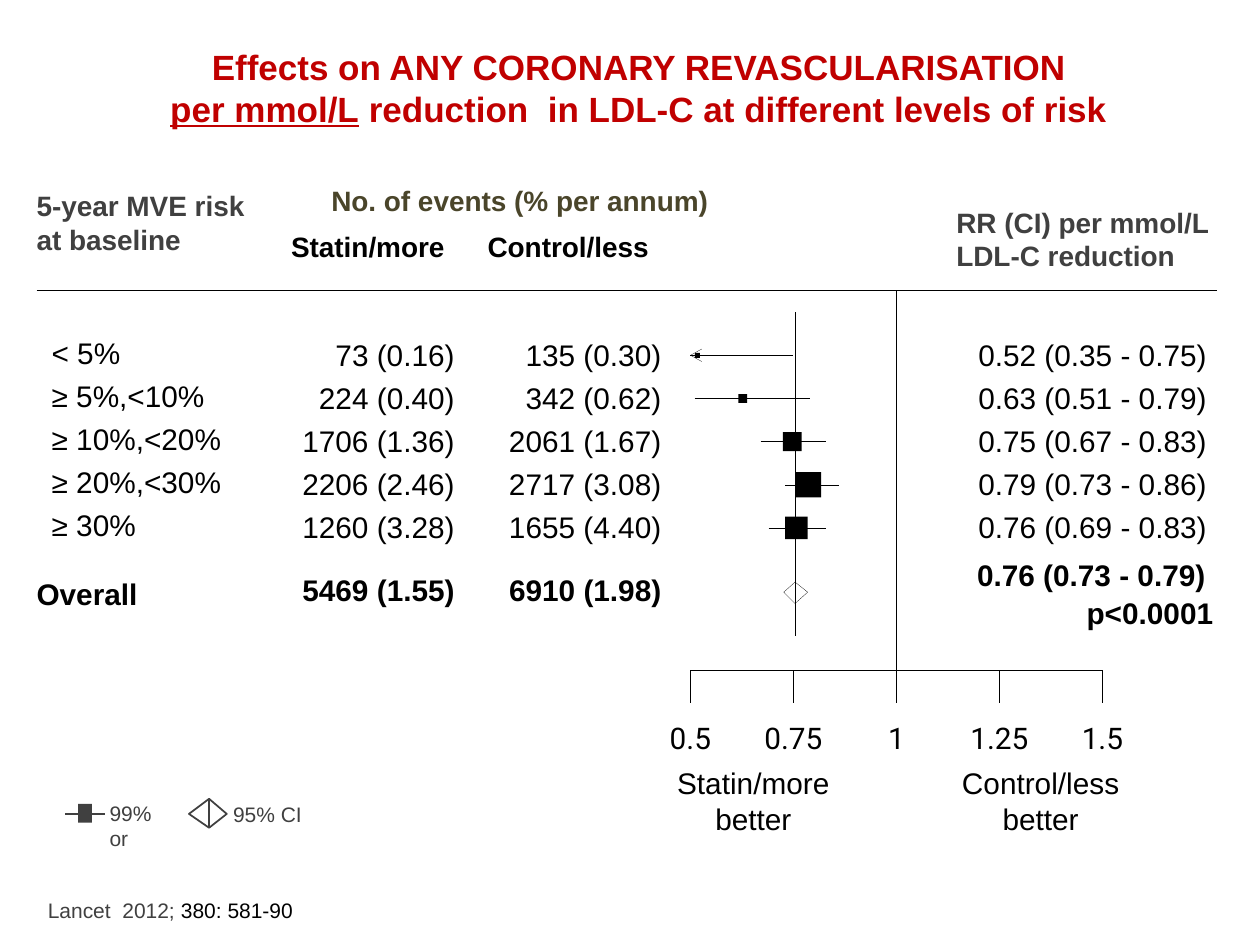
import pptx
import pptx.dml.color
import pptx.enum.dml
import pptx.enum.shapes
import pptx.enum.text
import pptx.oxml.xmlchemy
import pptx.util
from lxml import etree

Inches, Pt = pptx.util.Inches, pptx.util.Pt
RGBColor = pptx.dml.color.RGBColor
ALIGN = pptx.enum.text.PP_ALIGN
LEFT, CENTER, RIGHT = ALIGN.LEFT, ALIGN.CENTER, ALIGN.RIGHT
DRAWING_NS = "http://schemas.openxmlformats.org/drawingml/2006/main"

RED = RGBColor(0xC0, 0x00, 0x00)
GREY = RGBColor(0x40, 0x40, 0x40)
OLIVE = RGBColor(0x4A, 0x45, 0x2A)
BLACK = RGBColor(0x00, 0x00, 0x00)
HAIRLINE = 0.13

# Content: risk, statin events, control events, (estimate, low, high), marker size
RISK_ROWS = [
    ("< 5%", "73 (0.16)", "135 (0.30)", (0.52, 0.35, 0.75), 0.04),
    ("≥ 5%,<10%", "224 (0.40)", "342 (0.62)", (0.63, 0.51, 0.79), 0.07),
    ("≥ 10%,<20%", "1706 (1.36)", "2061 (1.67)", (0.75, 0.67, 0.83), 0.15),
    ("≥ 20%,<30%", "2206 (2.46)", "2717 (3.08)", (0.79, 0.73, 0.86), 0.20),
    ("≥ 30%", "1260 (3.28)", "1655 (4.40)", (0.76, 0.69, 0.83), 0.18),
]
# Heading lines, left, top, width, colour
HEADINGS = [
    (["5-year MVE risk", "at baseline"], 0.29, 1.5, 1.8, GREY),
    (["No. of events (% per annum)"], 2.63, 1.46, 3.2, OLIVE),
    (["Statin/more"], 2.31, 1.82, 1.35, BLACK),
    (["Control/less"], 3.87, 1.82, 1.4, BLACK),
    (["RR (CI) per mmol/L", "LDL-C reduction"], 7.59, 1.63, 2.2, GREY),
]
# Bold text, left, top, width, alignment
OVERALL = [
    ("Overall", 0.29, 4.57, 1.0, LEFT),
    ("5469 (1.55)", 2.2, 4.54, 1.41, RIGHT),
    ("6910 (1.98)", 3.84, 4.54, 1.41, RIGHT),
    ("0.76 (0.73 - 0.79)", 7.57, 4.42, 2.0, RIGHT),
    ("p<0.0001", 8.43, 4.72, 1.2, RIGHT),
]
TICKS = ["0.5", "0.75", "1", "1.25", "1.5"]
SIDES = [("Statin/more", 5.98), ("Control/less", 8.26)]

# Geometry
AXIS_LEFT, AXIS_TOP, AXIS_SCALE = 5.48, 5.32, 3.27
FIRST_ROW, ROW_STEP = 2.82, 0.3425
OVERALL_X, OVERALL_Y = 6.31, 4.7


def axis_x(ratio):
    return AXIS_LEFT + (ratio - 0.5) * AXIS_SCALE


def add_text(slide, lines, left, top, width, size=17, color=BLACK,
             bold=False, align=LEFT, font="Arial"):
    height = len(lines) * size / 60
    box = slide.shapes.add_textbox(*map(Inches, (left, top, width, height)))
    frame = box.text_frame
    frame.word_wrap = True
    frame.margin_left = frame.margin_right = 0
    frame.margin_top = frame.margin_bottom = 0
    frame.text = "\n".join(lines)
    for paragraph in frame.paragraphs:
        paragraph.alignment = align
        paragraph.font.name = font
        paragraph.font.size = Pt(size)
        paragraph.font.bold = bold
        paragraph.font.color.rgb = color
    return frame


def add_line(slide, x1, y1, x2, y2, color=BLACK, width=HAIRLINE):
    line = slide.shapes.add_connector(
        pptx.enum.shapes.MSO_CONNECTOR.STRAIGHT,
        *map(Inches, (x1, y1, x2, y2)))
    line.line.color.rgb = color
    line.line.width = Pt(width)
    properties = line._element.spPr
    etree.SubElement(properties, f"{{{DRAWING_NS}}}effectLst")
    return line


def add_marker(slide, x, y, width, height, color=BLACK):
    marker = slide.shapes.add_shape(
        pptx.enum.shapes.MSO_SHAPE.RECTANGLE,
        *map(Inches, (x - width / 2, y - height / 2, width, height)))
    marker.shadow.inherit = False
    marker.fill.solid()
    marker.fill.fore_color.rgb = color
    marker.line.fill.background()


def add_outline(slide, points, close, color=BLACK, width=HAIRLINE):
    corners = [(Inches(x), Inches(y)) for x, y in points]
    builder = slide.shapes.build_freeform(*corners[0])
    builder.add_line_segments(corners[1:], close=close)
    shape = builder.convert_to_shape()
    shape.shadow.inherit = False
    shape.fill.background()
    shape.line.color.rgb = color
    shape.line.width = Pt(width)


def add_titles(slide):
    frame = add_text(slide, ["Effects on ANY CORONARY REVASCULARISATION", ""],
                     0.57, 0.36, 9, 20, RED, True, CENTER)
    second = frame.paragraphs[1]
    unit = second.add_run()
    unit.text = "per mmol/L"
    unit.font.underline = True
    second.add_run().text = " reduction  in LDL-C at different levels of risk"
    for lines, left, top, width, color in HEADINGS:
        add_text(slide, lines, left, top, width, 16, color, True)
    add_line(slide, 0.29, 2.3, 9.66, 2.3)


def add_axis(slide):
    add_line(slide, axis_x(1), 5.45, axis_x(1), 2.3)
    add_line(slide, axis_x(0.5), AXIS_TOP, axis_x(1.5), AXIS_TOP)
    for label in TICKS:
        x = axis_x(float(label))
        add_line(slide, x, AXIS_TOP, x, AXIS_TOP + 0.26)
        add_text(slide, [label], x - 0.35, 5.71, 0.7,
                 align=CENTER, font="Roboto")
    for side, center in SIDES:
        add_text(slide, [side, "better"], center - 0.7, 6.07, 1.4, align=CENTER)


def add_risk_rows(slide):
    for index, (risk, statin, control, ratios, size) in enumerate(RISK_ROWS):
        y = FIRST_ROW + index * ROW_STEP
        estimate, low, high = ratios
        interval = f"{estimate:.2f} ({low:.2f} - {high:.2f})"
        add_text(slide, [risk], 0.41, y - 0.165, 1.5)
        for value, right in ((statin, 3.61), (control, 5.25), (interval, 9.58)):
            add_text(slide, [value], right - 2, y - 0.15, 2, align=RIGHT)
        add_marker(slide, axis_x(estimate) - 0.01, y, size, size)
        start = max(axis_x(low), AXIS_LEFT)
        add_line(slide, start, y, axis_x(high), y)
        if low < 0.5:  # the interval runs off the axis
            add_outline(slide, [(start + 0.09, y - 0.05), (start, y),
                                (start + 0.09, y + 0.05)], False)


def add_overall(slide):
    for value, left, top, width, align in OVERALL:
        add_text(slide, [value], left, top, width, bold=True, align=align)
    x, y = OVERALL_X, OVERALL_Y
    add_outline(slide, [(x - 0.09, y), (x, y - 0.08),
                        (x + 0.1, y), (x, y + 0.09)], True)
    reference = add_line(slide, x, 2.48, x, 5.04)
    reference.line.dash_style = pptx.enum.dml.MSO_LINE.SQUARE_DOT


def add_legend(slide):
    add_marker(slide, 0.675, 6.455, 0.11, 0.15, GREY)
    add_line(slide, 0.52, 6.46, 0.83, 6.46, GREY, 1)
    add_text(slide, ["99% or"], 0.87, 6.35, 0.5, 12, GREY)
    add_outline(slide, [(1.66, 6.34), (1.5, 6.46), (1.66, 6.57), (1.8, 6.46)],
                True, GREY, 1)
    add_line(slide, 1.66, 6.57, 1.66, 6.34, GREY, 1)
    add_text(slide, ["95% CI"], 1.85, 6.36, 0.7, 12, GREY)


def add_citation(slide):
    frame = add_text(slide, [""], 0.38, 7.12, 2.2, 12)
    journal = frame.paragraphs[0].add_run()
    journal.text = "Lancet  2012; "
    journal.font.color.rgb = GREY
    frame.paragraphs[0].add_run().text = "380: 581-90"


def main():
    presentation = pptx.Presentation()
    presentation.slide_width = Inches(10)
    presentation.slide_height = Inches(7.5)
    slide = presentation.slides.add_slide(presentation.slide_layouts[6])
    for add_part in (add_titles, add_axis, add_risk_rows, add_overall,
                     add_legend, add_citation):
        add_part(slide)
    presentation.save("out.pptx")


if __name__ == "__main__":
    main()
